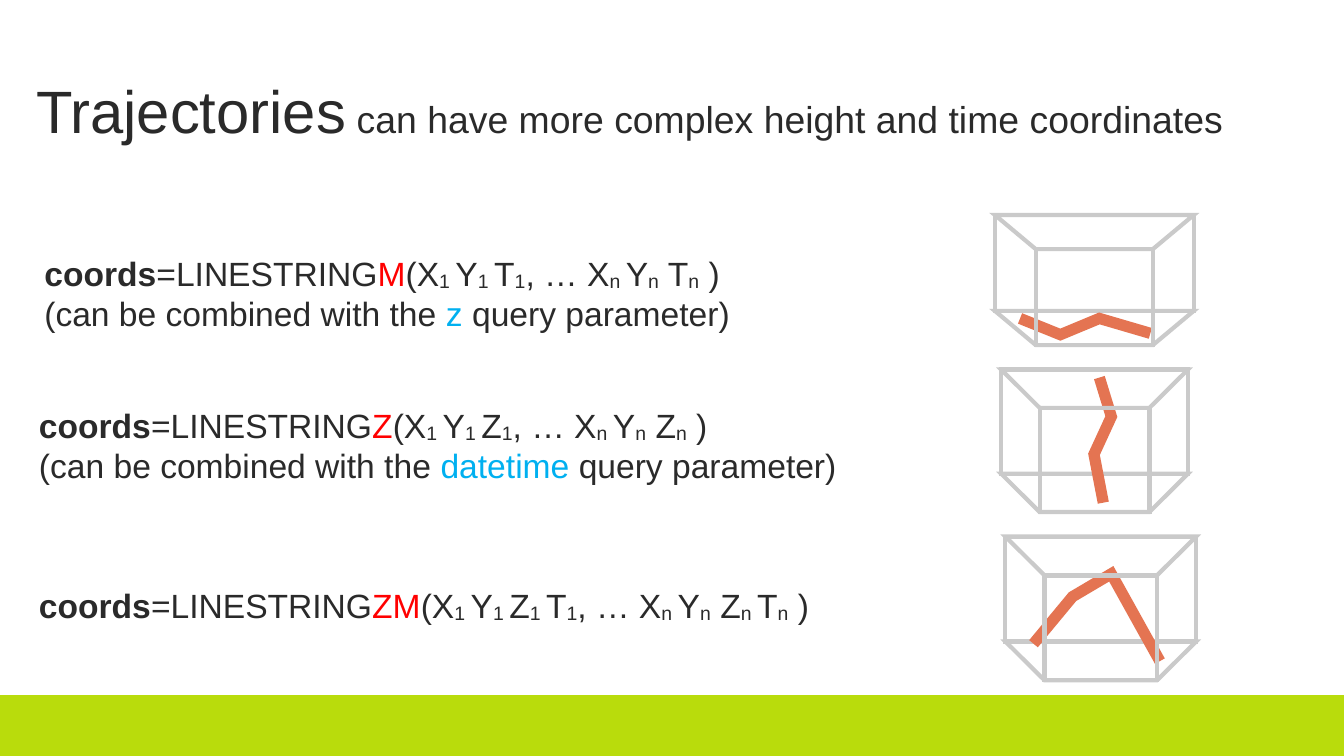
"""Build the slide on trajectory coordinates with three wireframe boxes."""
from lxml import etree
from pptx import Presentation
from pptx.dml.color import RGBColor
from pptx.enum.shapes import MSO_SHAPE
from pptx.enum.text import MSO_ANCHOR, MSO_AUTO_SIZE, PP_ALIGN
from pptx.oxml.ns import qn
from pptx.util import Pt

RECT = MSO_SHAPE.RECTANGLE
BOTTOM, TOP = MSO_ANCHOR.BOTTOM, MSO_ANCHOR.TOP
LEFT = PP_ALIGN.LEFT
NO_FIT, GROW = MSO_AUTO_SIZE.NONE, MSO_AUTO_SIZE.SHAPE_TO_FIT_TEXT
DARK = RGBColor(0x2A, 0x2A, 0x2A)
RED = RGBColor(0xFF, 0x00, 0x00)
BLUE = RGBColor(0x00, 0xB0, 0xF0)
GREEN = RGBColor(0xB9, 0xDC, 0x0C)
GREY = RGBColor(0xCA, 0xCA, 0xCA)
ORANGE = RGBColor(0xE4, 0x74, 0x52)


def add_run(p, text, size, color=DARK):
    r = p.add_run()
    r.text = text
    r.font.name = "Arial"
    r.font.size = Pt(size)
    r.font.color.rgb = color
    return r


def add_outline(shapes, points, color, width, closed=True):
    pts = [(Pt(x), Pt(y)) for x, y in points]
    builder = shapes.build_freeform(*pts[0])
    builder.add_line_segments(pts[1:], close=closed)
    s = builder.convert_to_shape()
    s.shadow.inherit = False
    s.fill.background()
    s.line.color.rgb = color
    s.line.width = Pt(width)
    etree.SubElement(s.line._get_or_add_ln(), qn("a:miter"), lim="800000")


prs = Presentation()
prs.slide_width, prs.slide_height = Pt(720), Pt(405)
slide = prs.slides.add_slide(prs.slide_layouts[5])
shapes = slide.shapes

bar = shapes.add_shape(RECT, Pt(0), Pt(372.8), Pt(720), Pt(32.2))
bar.shadow.inherit = False
bar.fill.solid()
bar.fill.fore_color.rgb = GREEN
bar.line.color.rgb = GREEN
bar.line.width = Pt(1)

title = shapes.title
title.left, title.top, title.width, title.height = Pt(12.2), Pt(36.7), Pt(680.4), Pt(45.4)
tf = title.text_frame
tf.auto_size = NO_FIT
tf.word_wrap = True
tf.vertical_anchor = BOTTOM
p = tf.paragraphs[0]
p.alignment = LEFT
p.line_spacing = 0.9
add_run(p, "Trajectories", 32)
add_run(p, " can have more complex height and time\u00a0coordinates".replace("\u00a0", " "), 20)

queries = [
    (20.2, 131.8, 379.4, 51.1, "M", "(X|1 |Y|1 |T|1|, … X|n |Y|n| T|n| )", "z"),
    (17.3, 213.1, 438.5, 51.1, "Z", "(X|1 |Y|1 |Z|1|, … X|n |Y|n| Z|n| )", "datetime"),
    (17.3, 309.6, 433.4, 28.8, "ZM", "(X|1 |Y|1 |Z|1 |T|1|, … X|n |Y|n| Z|n |T|n| )", None),
]
for x, y, w, h, suffix, coords, parameter in queries:
    s = shapes.add_textbox(Pt(x), Pt(y), Pt(w), Pt(h))
    tf = s.text_frame
    tf.word_wrap = False
    tf.auto_size = GROW
    tf.vertical_anchor = TOP
    tf.margin_left = tf.margin_right = tf.margin_top = tf.margin_bottom = Pt(3.6)
    p = tf.paragraphs[0]
    add_run(p, "coords", 18).font.bold = True
    add_run(p, "=LINESTRING", 18)
    add_run(p, suffix, 18, RED)
    for i, part in enumerate(coords.split("|")):
        r = add_run(p, part, 18)
        if i % 2:
            r.font._element.set("baseline", "-6000")
    if parameter:
        p = tf.add_paragraph()
        add_run(p, "(can be combined with the ", 18)
        add_run(p, parameter, 18, BLUE)
        add_run(p, " query parameter)", 18)

boxes = [
    (536.4, 198, 100, 55.8, 20.6, 20.5, 3,
     [(589, 202.3), (595.4, 223.2), (586.1, 243.4), (591.1, 269.3)]),
    (538.6, 287.5, 102.2, 56.2, 21, 20.8, 2,
     [(553.7, 344.9), (574.6, 319.7), (595.4, 307.4), (621.4, 354.2)]),
    (533, 115.2, 106.5, 51.4, 21.9, 18.3, 2,
     [(546.5, 170.6), (568.1, 179.3), (589, 170.6), (616.3, 178.6)]),
]
for x, y, w, h, dx, dy, path_level, path in boxes:
    right, floor = x + w, y + h
    back = [(x, y), (right, y), (right, floor), (x, floor)]
    front = [(x + dx, y + dy), (right - dx, y + dy),
             (right - dx, floor + dy), (x + dx, floor + dy)]
    base = [back[3], back[2], front[2], front[3]]
    roof = [back[0], back[1], front[1], front[0]]
    for level, face in enumerate([back, base, front, roof]):
        if level == path_level:
            add_outline(shapes, path, ORANGE, 6, closed=False)
        add_outline(shapes, face, GREY, 2.25)

prs.save("out.pptx")
